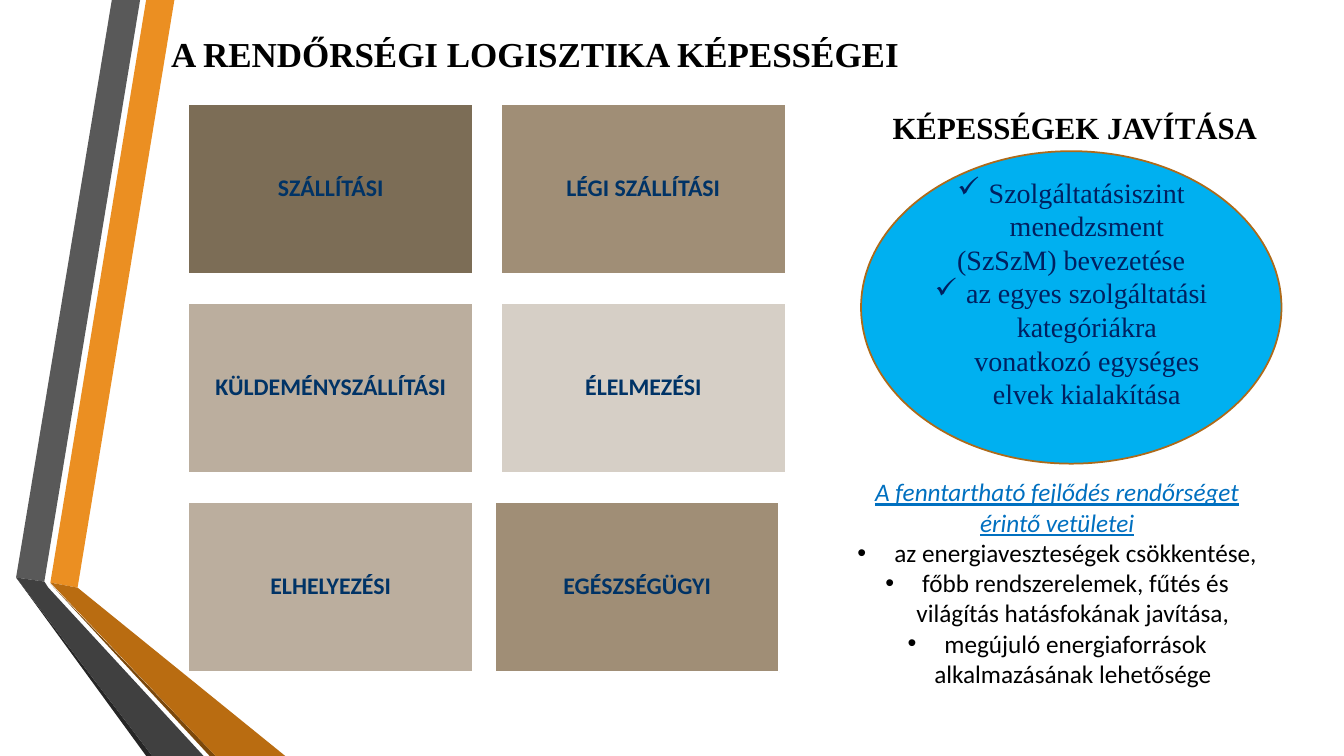
from lxml import etree
from pptx import Presentation
from pptx.dml.color import RGBColor
from pptx.enum import shapes, text
from pptx.oxml import ns
from pptx.util import Inches, Pt

# Content
HEADING = " A RENDŐRSÉGI LOGISZTIKA KÉPESSÉGEI"
CAPABILITIES = [  # label, fill, left
    ("SZÁLLÍTÁSI", "umber", 1.87), ("LÉGI SZÁLLÍTÁSI", "tan", 4.97),
    ("KÜLDEMÉNYSZÁLLÍTÁSI", "sand", 1.87), ("ÉLELMEZÉSI", "pale", 4.97),
    ("ELHELYEZÉSI", "sand", 1.87), ("EGÉSZSÉGÜGYI", "tan", 4.91),
]
IMPROVEMENT = "KÉPESSÉGEK JAVÍTÁSA"
SERVICE_LEVEL = [  # bullet, text
    ("✓", "Szolgáltatásiszint menedzsment"),
    (None, "(SzSzM) bevezetése"),
    ("✓", "az egyes szolgáltatási kategóriákra vonatkozó egységes elvek kialakítása"),
]
SUSTAINABILITY = [
    (None, "A fenntartható fejlődés rendőrséget érintő vetületei"),
    ("•", " az energiaveszteségek csökkentése,"),
    ("•", " főbb rendszerelemek, fűtés és világítás hatásfokának javítása,"),
    ("•", " megújuló energiaforrások alkalmazásának lehetősége"),
]
RIBBONS = [
    ("orange", [(0.5, 5.78), (0.77, 5.83), (1.73, 0), (1.45, 0)]),
    ("grey", [(1.39, 0), (1.11, 0), (0.16, 5.73), (0.44, 5.77)]),
    ("black", [(0.16, 5.73), (1.45, 7.5), (1.51, 7.5)]),
    ("brown", [(0.5, 5.79), (2.08, 7.5), (2.14, 7.5)]),
    ("rust", [(0.5, 5.78), (2.14, 7.5), (2.83, 7.5), (0.77, 5.83)]),
    ("charcoal", [(2.02, 7.5), (0.48, 5.83), (0.44, 5.77), (0.16, 5.73), (1.51, 7.5)]),
]
COLORS = {
    "orange": "EB8F22", "grey": "595959", "black": "262626", "brown": "7B480B",
    "rust": "B96C11", "charcoal": "404040", "umber": "7C6D56", "tan": "A08E76",
    "sand": "BBAE9E", "pale": "D6CFC6", "sky": "00B0F0", "rim": "AE6A19",
    "white": "FFFFFF", "ink": "000000", "navy": "003366", "deep": "002060",
    "link": "0070C0",
}
SERIF, SANS = "Times New Roman", "Calibri"


def rgb(name):
    return RGBColor.from_string(COLORS[name])


def place(shape, left, top, width, height):
    shape.left, shape.top = Inches(left), Inches(top)
    shape.width, shape.height = Inches(width), Inches(height)


def paint(shape, fill, line=None):
    shape.shadow.inherit = False
    shape.fill.solid()
    shape.fill.fore_color.rgb = rgb(fill)
    if line:
        shape.line.color.rgb = rgb(line)
        shape.line.width = Pt(1.25)
    else:
        shape.line.fill.background()


def write(shape, lines, size, face, color, bold=False,
          anchor=text.MSO_ANCHOR.TOP, spacing=1.0):
    frame = shape.text_frame
    frame.word_wrap = True
    frame.auto_size = text.MSO_AUTO_SIZE.NONE
    frame.vertical_anchor = anchor
    frame.text = "\n".join(line for _, line in lines)
    for paragraph, (bullet, _) in zip(frame.paragraphs, lines):
        paragraph.alignment = text.PP_ALIGN.CENTER
        paragraph.line_spacing = spacing
        paragraph.space_before = paragraph.space_after = Pt(0)
        props = paragraph._p.get_or_add_pPr()
        indent = Inches(0.31) if bullet else 0
        props.set("marL", str(indent))
        props.set("indent", str(-indent))
        if bullet:
            etree.SubElement(props, ns.qn("a:buChar"), char=bullet)
        else:
            etree.SubElement(props, ns.qn("a:buNone"))
        font = paragraph.font
        font.size, font.name, font.bold = Pt(size), face, bold
        font.color.rgb = rgb(color)
    return frame


def main():
    deck = Presentation()
    deck.slide_width, deck.slide_height = Inches(13.33), Inches(7.5)
    slide = deck.slides.add_slide(deck.slide_layouts[1])
    heading, sustainability = slide.placeholders

    # Folded ribbons on the left
    for color, points in RIBBONS:
        start, *rest = [(Inches(x), Inches(y)) for x, y in points]
        builder = slide.shapes.build_freeform(*start)
        builder.add_line_segments(rest)
        paint(builder.convert_to_shape(), color)

    # Heading
    place(heading, 0.47, 0.27, 9.6, 0.52)
    write(heading, [(None, HEADING)], 25, SERIF, "ink", bold=True)

    # Capability cards, two to a row
    for index, (label, fill, left) in enumerate(CAPABILITIES):
        card = slide.shapes.add_shape(shapes.MSO_SHAPE.RECTANGLE, 0, 0, 0, 0)
        place(card, left, 1.03 + index // 2 * 1.975, 2.82, 1.69)
        paint(card, fill, "white")
        frame = write(card, [(None, label)], 17, SANS, "navy", bold=True,
                      anchor=text.MSO_ANCHOR.MIDDLE, spacing=0.9)
        frame.margin_left = frame.margin_right = Inches(0.07)

    # Improvement ellipse with its caption
    improvement = slide.shapes.add_textbox(0, 0, 0, 0)
    place(improvement, 8.68, 1.03, 3.96, 0.47)
    write(improvement, [(None, IMPROVEMENT)], 22, SERIF, "ink", bold=True)

    service = slide.shapes.add_shape(shapes.MSO_SHAPE.OVAL, 0, 0, 0, 0)
    place(service, 8.54, 1.5, 4.17, 3.1)
    paint(service, "sky", "rim")
    frame = write(service, SERVICE_LEVEL, 20, SERIF, "deep",
                  anchor=text.MSO_ANCHOR.MIDDLE)
    frame.margin_bottom = Inches(0.34)

    # Sustainability list
    place(sustainability, 8.34, 4.68, 4.29, 2.22)
    frame = write(sustainability, SUSTAINABILITY, 18, SANS, "ink")
    lead = frame.paragraphs[0].font
    lead.italic = lead.underline = True
    lead.color.rgb = rgb("link")

    deck.save("out.pptx")


if __name__ == "__main__":
    main()
